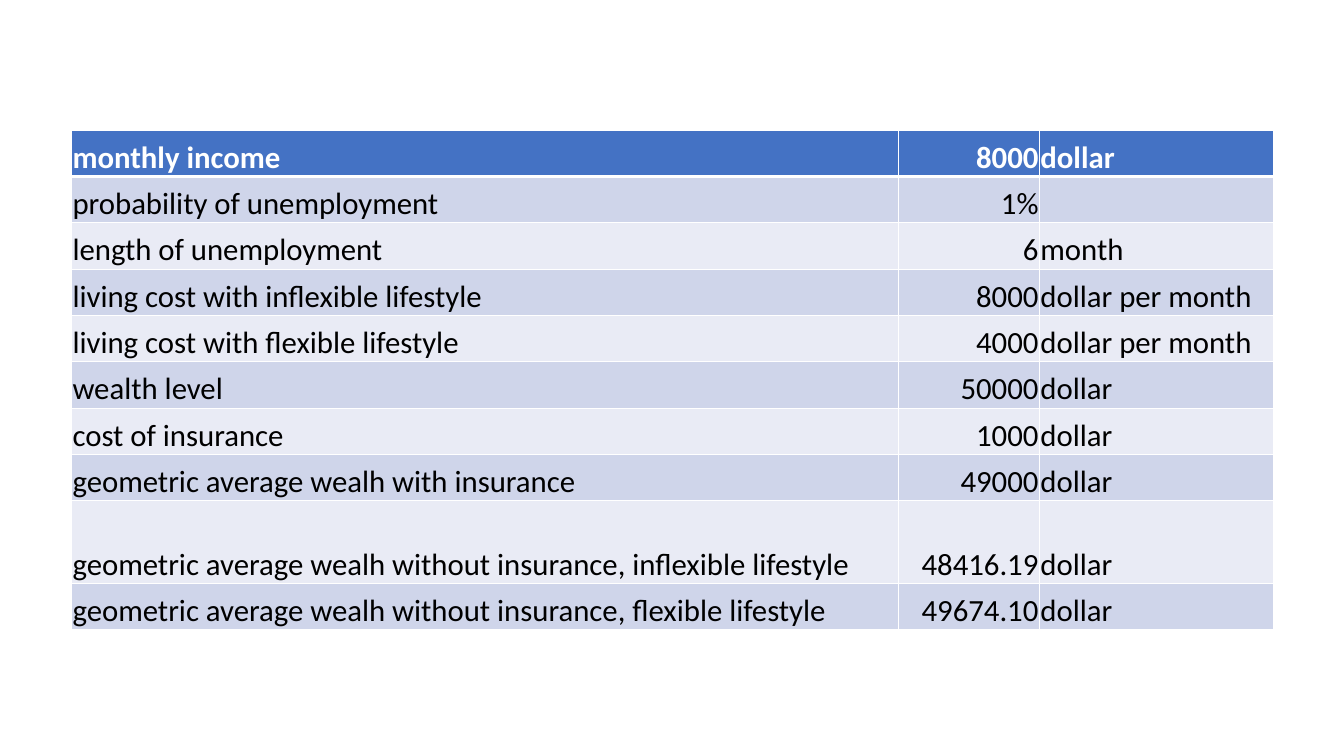
import lxml.etree
import pptx
import pptx.dml.color
import pptx.enum.text
import pptx.oxml.ns
import pptx.util

Inches = pptx.util.Inches
Pt = pptx.util.Pt
qn = pptx.oxml.ns.qn

COLORS = {
    "header": "4472C4",
    "band_dark": "CFD5EA",
    "band_light": "E9EBF5",
    "border": "FFFFFF",
    "header_text": "FFFFFF",
    "text": "000000",
}

ASSUMPTIONS = [
    ("monthly income", "8000", "dollar"),
    ("probability of unemployment", "1%", ""),
    ("length of unemployment", "6", "month"),
    ("living cost with inflexible lifestyle", "8000", "dollar per month"),
    ("living cost with flexible lifestyle", "4000", "dollar per month"),
    ("wealth level", "50000", "dollar"),
    ("cost of insurance", "1000", "dollar"),
    ("geometric average wealh with insurance", "49000", "dollar"),
    ("geometric average wealh without insurance, inflexible lifestyle", "48416.19", "dollar"),
    ("geometric average wealh without insurance, flexible lifestyle", "49674.10", "dollar"),
]
COLUMN_WIDTHS = [8.2, 1.4, 2.32]
ROW_HEIGHT, TALL_ROW_HEIGHT, TALL_ROW = 0.46, 0.82, 8
VALUE_COLUMN = 1


def rgb(name):
    return pptx.dml.color.RGBColor.from_string(COLORS[name])


class SlideBuilder:
    """Holds the text style and the slide being filled."""

    def __init__(self, prs, font="Calibri", size=22):
        self.slide = prs.slides.add_slide(prs.slide_layouts[6])
        self.font, self.size = font, size

    def add_table(self, rows, left, top, widths, heights):
        frame = self.slide.shapes.add_table(
            len(rows), len(widths), Inches(left), Inches(top),
            Inches(sum(widths)), Inches(sum(heights)))
        table = frame.table
        for column, width in zip(table.columns, widths):
            column.width = Inches(width)
        for i, (row, height) in enumerate(zip(rows, heights)):
            table.rows[i].height = Inches(height)
            for j, text in enumerate(row):
                self.fill_cell(table.cell(i, j), text, i, j)

    def fill_cell(self, cell, text, row, col):
        header = row == 0
        cell.margin_left = cell.margin_right = cell.margin_top = Inches(0.01)
        cell.margin_bottom = 0
        cell.vertical_anchor = pptx.enum.text.MSO_ANCHOR.BOTTOM
        self.set_borders(cell, top=3 if row == 1 else 1, bottom=3 if header else 1)
        cell.fill.solid()
        band = "band_dark" if row % 2 else "band_light"
        cell.fill.fore_color.rgb = rgb("header" if header else band)

        p = cell.text_frame.paragraphs[0]
        p.text = text
        align = pptx.enum.text.PP_ALIGN
        p.alignment = align.RIGHT if col == VALUE_COLUMN else align.LEFT
        p.font.name, p.font.size, p.font.bold = self.font, Pt(self.size), header
        p.font.color.rgb = rgb("header_text" if header else "text")

    def set_borders(self, cell, top, bottom):
        """Draws the four cell edges; call before filling, as the schema orders it."""
        props = cell._tc.get_or_add_tcPr()
        for tag, width in (("a:lnL", 1), ("a:lnR", 1), ("a:lnT", top), ("a:lnB", bottom)):
            line = lxml.etree.SubElement(props, qn(tag), w=str(Pt(width)))
            fill = lxml.etree.SubElement(line, qn("a:solidFill"))
            lxml.etree.SubElement(fill, qn("a:srgbClr"), val=COLORS["border"])


def main():
    prs = pptx.Presentation()
    prs.slide_width, prs.slide_height = Inches(13.33), Inches(7.5)
    heights = [TALL_ROW_HEIGHT if i == TALL_ROW else ROW_HEIGHT
               for i in range(len(ASSUMPTIONS))]
    SlideBuilder(prs).add_table(ASSUMPTIONS, 0.71, 1.29, COLUMN_WIDTHS, heights)
    prs.save("out.pptx")


if __name__ == "__main__":
    main()
